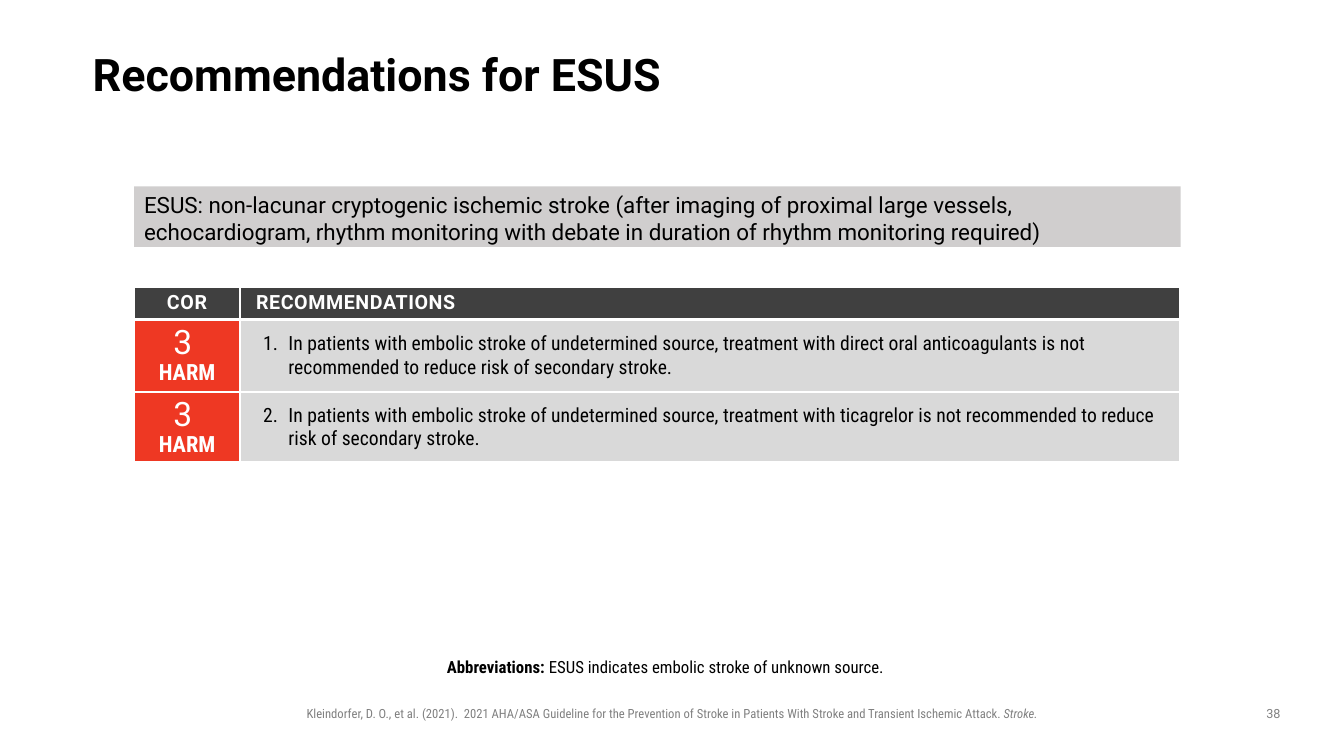
from dataclasses import dataclass, field
from typing import Any

from lxml import etree
from pptx import Presentation
from pptx import util as u
from pptx.dml.color import RGBColor
from pptx.enum import shapes, text
from pptx.oxml import ns

WIDTH, HEIGHT = u.Inches(13.33), u.Inches(7.5)
BLACK, WHITE, GRAY = "000000", "FFFFFF", "808080"
CHARCOAL, HARM_RED, ROW_GRAY, PANEL_GRAY = "404040", "EE3823", "D9D9D9", "D0CECE"
SANS, CONDENSED = "Roboto", "Roboto Condensed"
CENTER = text.PP_ALIGN.CENTER
MIDDLE = text.MSO_ANCHOR.MIDDLE


@dataclass(frozen=True)
class Span:
    words: str
    size: float
    face: str = SANS
    color: str = BLACK
    bold: bool = False
    italic: bool = False
    tracking: float = 0
    breaks: bool = False


@dataclass(frozen=True)
class Passage:
    spans: list[Span]
    layout: dict[str, Any] = field(default_factory=dict)
    number: int = 0
    indent: tuple[float, float] = (0, 0)


@dataclass(frozen=True)
class Area:
    left: float
    top: float
    width: float
    height: float

    def place(self) -> tuple[int, int, int, int]:
        return (across(self.left), down(self.top),
                across(self.width), down(self.height))


@dataclass(frozen=True)
class Block:
    area: Area
    passage: Passage
    frame: dict[str, Any] = field(default_factory=dict)


@dataclass(frozen=True)
class Entry:
    passage: Passage
    fill: str
    margin: dict[str, Any] = field(default_factory=dict)


def across(percent: float) -> int:
    return round(WIDTH * percent / 100)


def down(percent: float) -> int:
    return round(HEIGHT * percent / 100)


def paint(target: Any, color: str) -> None:
    target.solid()
    target.fore_color.rgb = RGBColor.from_string(color)


def assign(target: Any, values: dict[str, Any]) -> None:
    for name, value in values.items():
        setattr(target, name, value)


def write(paragraph: Any, passage: Passage) -> None:
    properties = paragraph._p.get_or_add_pPr()
    for key, inches in zip(("marL", "indent"), passage.indent):
        properties.set(key, str(u.Inches(inches)))
    if passage.number:
        etree.SubElement(properties, ns.qn("a:buAutoNum"),
                         type="arabicPeriod", startAt=str(passage.number))
    assign(paragraph, passage.layout)
    for span in passage.spans:
        run = paragraph.add_run()
        run.text = span.words
        assign(run.font, {"name": span.face, "size": u.Pt(span.size),
                          "bold": span.bold, "italic": span.italic})
        paint(run.font.fill, span.color)
        if span.tracking:
            run._r.get_or_add_rPr().set("spc", str(round(span.tracking * 100)))
        if span.breaks:
            paragraph.add_line_break()


def draw_block(slide: Any, block: Block) -> None:
    frame = slide.shapes.add_textbox(*block.area.place()).text_frame
    assign(frame, {"word_wrap": True, **block.frame})
    write(frame.paragraphs[0], block.passage)


def draw_panel(slide: Any, area: Area, color: str) -> None:
    panel = slide.shapes.add_shape(shapes.MSO_SHAPE.RECTANGLE, *area.place())
    panel.shadow.inherit = False
    paint(panel.fill, color)
    panel.line.fill.background()


def border(cell: Any, color: str, points: float) -> None:
    properties = cell._tc.get_or_add_tcPr()
    for side in ("lnL", "lnR", "lnT", "lnB"):
        edge = etree.SubElement(properties, ns.qn(f"a:{side}"), w=str(u.Pt(points)))
        solid = etree.SubElement(edge, ns.qn("a:solidFill"))
        etree.SubElement(solid, ns.qn("a:srgbClr"), val=color)


def draw_table(slide: Any, area: Area, columns: list[float], rows: list[float],
               entries: list[list[Entry]]) -> None:
    table = slide.shapes.add_table(len(rows), len(columns), *area.place()).table
    assign(table, {"first_row": False, "horz_banding": False})
    for column, share in zip(table.columns, columns):
        column.width = across(share)
    for row, share, line in zip(table.rows, rows, entries):
        row.height = down(share)
        for cell, entry in zip(row.cells, line):
            border(cell, WHITE, 2.25)
            paint(cell.fill, entry.fill)
            assign(cell, {"vertical_anchor": MIDDLE, **entry.margin})
            write(cell.text_frame.paragraphs[0], entry.passage)


SIDES = ("margin_left", "margin_top", "margin_right", "margin_bottom")
TIGHT = dict.fromkeys(SIDES, u.Inches(0.05))
FLUSH = dict.fromkeys(SIDES, 0)

PANEL = Area(9.98, 24.67, 77.87, 8)
GUIDELINE = Area(9.98, 37.87, 77.87, 23.33)
COLUMNS = [7.88, 69.99]
ROWS = [4.4, 9.6, 9.33]

FOOTER = Block(Area(22.06, 92.67, 55.89, 3.33), Passage([
    Span("Kleindorfer, D. O., et al. (2021).  2021 AHA/ASA Guideline for the Prevention "
         "of Stroke in Patients With Stroke and Transient Ischemic Attack. ",
         9, CONDENSED, GRAY),
    Span("Stroke.", 9, CONDENSED, GRAY, italic=True)], {"alignment": CENTER}))
TITLE = Block(Area(6.9, 5.33, 86.27, 9.6),
              Passage([Span("Recommendations for ESUS", 32, bold=True)],
                      {"line_spacing": 0.9}),
              {**FLUSH, "vertical_anchor": MIDDLE})
DEFINITION = Block(Area(9.98, 24.67, 77.87, 8.53), Passage([
    Span("ESUS: non-lacunar cryptogenic ischemic stroke (after imaging of proximal large "
         "vessels, echocardiogram, rhythm monitoring with debate in duration of rhythm "
         "monitoring required)", 16)]))
ABBREVIATIONS = Block(Area(25.43, 86.53, 49.21, 7.73), Passage([
    Span("Abbreviations: ", 12, CONDENSED, bold=True),
    Span("ESUS indicates embolic stroke of unknown source. ", 12, CONDENSED)],
    {"alignment": CENTER, "line_spacing": 0.9}), {"margin_left": 0})
PAGE = Block(Area(93.17, 92.67, 3.15, 3.47),
             Passage([Span("38", 9, color=GRAY)], {"alignment": CENTER}))

HEADINGS = [
    Entry(Passage([Span("COR", 14, color=WHITE, bold=True, tracking=0.5)],
                  {"alignment": CENTER}), CHARCOAL),
    Entry(Passage([Span("RECOMMENDATIONS", 14, color=WHITE, bold=True, tracking=0.4)],
                  indent=(0.06, 0)), CHARCOAL)]
HARM = Entry(Passage([Span("3 ", 24, color=WHITE, breaks=True),
                      Span("HARM", 16, CONDENSED, WHITE, bold=True)],
                     {"alignment": CENTER, "line_spacing": 0.9}), HARM_RED, TIGHT)
ADVICE = [
    "In patients with embolic stroke of undetermined source, treatment with direct oral "
    "anticoagulants is not recommended to reduce risk of secondary stroke.",
    "In patients with embolic stroke of undetermined source, treatment with ticagrelor "
    "is not recommended to reduce risk of secondary stroke."]


def main() -> None:
    deck = Presentation()
    assign(deck, {"slide_width": WIDTH, "slide_height": HEIGHT})
    slide = deck.slides.add_slide(deck.slide_layouts[6])
    recommendations = [
        [HARM, Entry(Passage([Span(advice, 14, CONDENSED)], number=number,
                             indent=(0.43, -0.25)), ROW_GRAY, TIGHT)]
        for number, advice in enumerate(ADVICE, 1)]
    draw_panel(slide, PANEL, PANEL_GRAY)
    draw_table(slide, GUIDELINE, COLUMNS, ROWS, [HEADINGS, *recommendations])
    for block in (FOOTER, TITLE, DEFINITION, ABBREVIATIONS, PAGE):
        draw_block(slide, block)
    deck.save("out.pptx")


if __name__ == "__main__":
    main()
